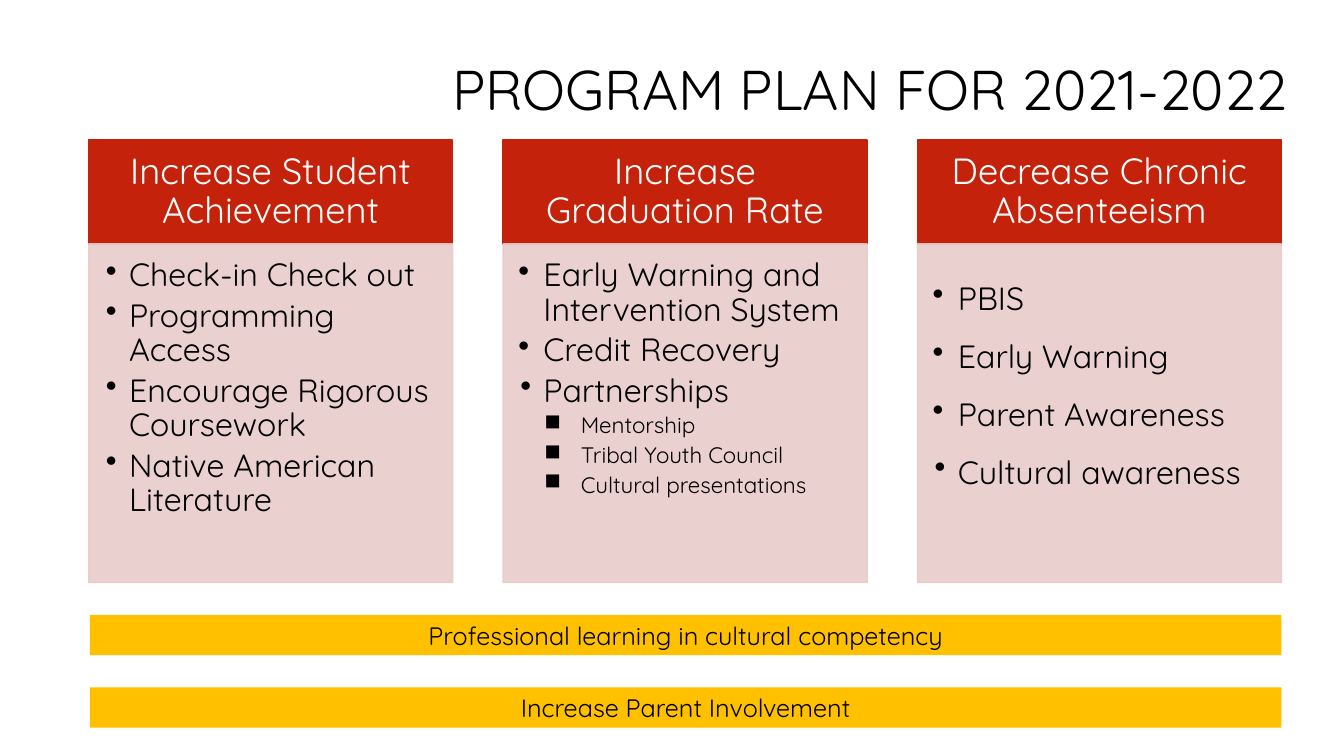
from dataclasses import dataclass

from lxml import etree
from pptx import Presentation
from pptx.dml.color import RGBColor
from pptx.enum import shapes, text
from pptx.oxml import ns
from pptx.util import Inches, Pt

FONT = "Quicksand"
COLORS = {
    "ink": "000000",
    "paper": "FFFFFF",
    "header": "C4220A",
    "panel": "E8CBCA",
    "bar": "FFC000",
}
CENTER, RIGHT = text.PP_ALIGN.CENTER, text.PP_ALIGN.RIGHT
TOP, MIDDLE = text.MSO_ANCHOR.TOP, text.MSO_ANCHOR.MIDDLE

COLUMN_LEFT, COLUMN_STEP, COLUMN_WIDTH = 0.88, 4.11, 3.61
HEADER_TOP, HEADER_HEIGHT, PANEL_HEIGHT = 1.39, 1.03, 3.36
BAR_TOP, BAR_STEP = 6.1, 0.72


@dataclass
class Bullet:
    text: str
    hanging: float = 0.25
    indent: float = 0.25
    level: int = 1
    size: float = 23
    mark: str = "•"


@dataclass
class Goal:
    heading: str
    bullets: list[Bullet]
    line_spacing: float = 0.9
    gap: float = 3.9


def sub_bullet(words: str) -> Bullet:
    return Bullet(words, hanging=0.36, indent=0.62, level=2, size=16, mark="■")


GOALS = [
    Goal("Increase Student Achievement", [
        Bullet("Check-in Check out", 0.23),
        Bullet("Programming Access", 0.23),
        Bullet("Encourage Rigorous Coursework", 0.23),
        Bullet("Native American Literature", 0.23),
    ]),
    Goal("Increase Graduation Rate", [
        Bullet("Early Warning and Intervention System"),
        Bullet("Credit Recovery"),
        Bullet("Partnerships", 0.23),
        sub_bullet("Mentorship"),
        sub_bullet("Tribal Youth Council"),
        sub_bullet("Cultural presentations"),
    ]),
    Goal("Decrease Chronic Absenteeism", [
        Bullet("PBIS"),
        Bullet("Early Warning"),
        Bullet("Parent Awareness"),
        Bullet("Cultural awareness", 0.23),
    ], line_spacing=1.5, gap=0),
]
BARS = ["Professional learning in cultural competency", "Increase Parent Involvement"]


def rgb(name: str) -> RGBColor:
    return RGBColor.from_string(COLORS[name])


def write(para, words: str, *, size: float, color: str = "ink", align=None,
          line_spacing: float = 1.0, before: float = 0) -> None:
    para.alignment = align
    para.line_spacing = line_spacing
    para.space_before = Pt(before)
    span = para.add_run()
    span.text = words
    span.font.name = FONT
    span.font.size = Pt(size)
    span.font.color.rgb = rgb(color)


def add_bullet_mark(para, bullet: Bullet) -> None:
    para.level = bullet.level
    props = para._p.get_or_add_pPr()
    props.set("marL", str(Inches(bullet.indent)))
    props.set("indent", str(-Inches(bullet.hanging)))
    color = etree.SubElement(props, ns.qn("a:buClr"))
    etree.SubElement(color, ns.qn("a:srgbClr"), val=COLORS["ink"])
    etree.SubElement(props, ns.qn("a:buChar"), char=bullet.mark)


def set_frame(box, margins: tuple[float, float, float, float], anchor) -> None:
    """Wrap the text of a box; margins are left, top, right, bottom."""
    frame = box.text_frame
    frame.word_wrap = True
    frame.vertical_anchor = anchor
    (frame.margin_left, frame.margin_top,
     frame.margin_right, frame.margin_bottom) = map(Inches, margins)


def add_block(page, left: float, top: float, width: float, height: float, *,
              color: str, outlined: bool = False, opacity: int = 100):
    box = page.shapes.add_shape(
        shapes.MSO_SHAPE.RECTANGLE, *map(Inches, (left, top, width, height)))
    box.shadow.inherit = False
    box.fill.solid()
    box.fill.fore_color.rgb = rgb(color)
    if outlined:
        box.line.color.rgb = rgb(color)
        box.line.width = Pt(1)
    else:
        box.line.fill.background()
    if opacity < 100:
        for tint in box._element.spPr.iter(ns.qn("a:srgbClr")):
            etree.SubElement(tint, ns.qn("a:alpha"), val=str(opacity * 1000))
    return box


def add_title(page) -> None:
    box = page.shapes.add_textbox(*map(Inches, (3.45, 0.21, 9.42, 1.41)))
    set_frame(box, (0.1, 0.05, 0.1, 0.05), MIDDLE)
    write(box.text_frame.paragraphs[0], "PROGRAM PLAN FOR 2021-2022",
          size=40, align=RIGHT, line_spacing=0.9)


def add_goal(page, goal: Goal, left: float) -> None:
    header = add_block(page, left, HEADER_TOP, COLUMN_WIDTH, HEADER_HEIGHT,
                       color="header", outlined=True)
    set_frame(header, (0.2, 0.12, 0.2, 0.12), MIDDLE)
    write(header.text_frame.paragraphs[0], goal.heading,
          size=26, color="paper", align=CENTER, line_spacing=0.9)

    panel = add_block(page, left, HEADER_TOP + HEADER_HEIGHT, COLUMN_WIDTH, PANEL_HEIGHT,
                      color="panel", outlined=True, opacity=90)
    set_frame(panel, (0.15, 0.15, 0.2, 0.23), TOP)
    frame = panel.text_frame
    for index, bullet in enumerate(goal.bullets):
        para = frame.add_paragraph() if index else frame.paragraphs[0]
        write(para, bullet.text, size=bullet.size, align=text.PP_ALIGN.LEFT,
              line_spacing=goal.line_spacing, before=goal.gap if index else 0)
        add_bullet_mark(para, bullet)


def add_bar(page, words: str, top: float) -> None:
    bar = add_block(page, 0.89, top, 11.82, 0.4, color="bar")
    set_frame(bar, (0.1, 0.05, 0.1, 0.05), TOP)
    write(bar.text_frame.paragraphs[0], words, size=18, align=CENTER)


def main() -> None:
    deck = Presentation()
    deck.slide_width, deck.slide_height = Inches(13.33), Inches(7.5)
    page = deck.slides.add_slide(deck.slide_layouts[6])
    add_title(page)
    for column, goal in enumerate(GOALS):
        add_goal(page, goal, COLUMN_LEFT + column * COLUMN_STEP)
    for row, words in enumerate(BARS):
        add_bar(page, words, BAR_TOP + row * BAR_STEP)
    deck.save("out.pptx")


if __name__ == "__main__":
    main()
